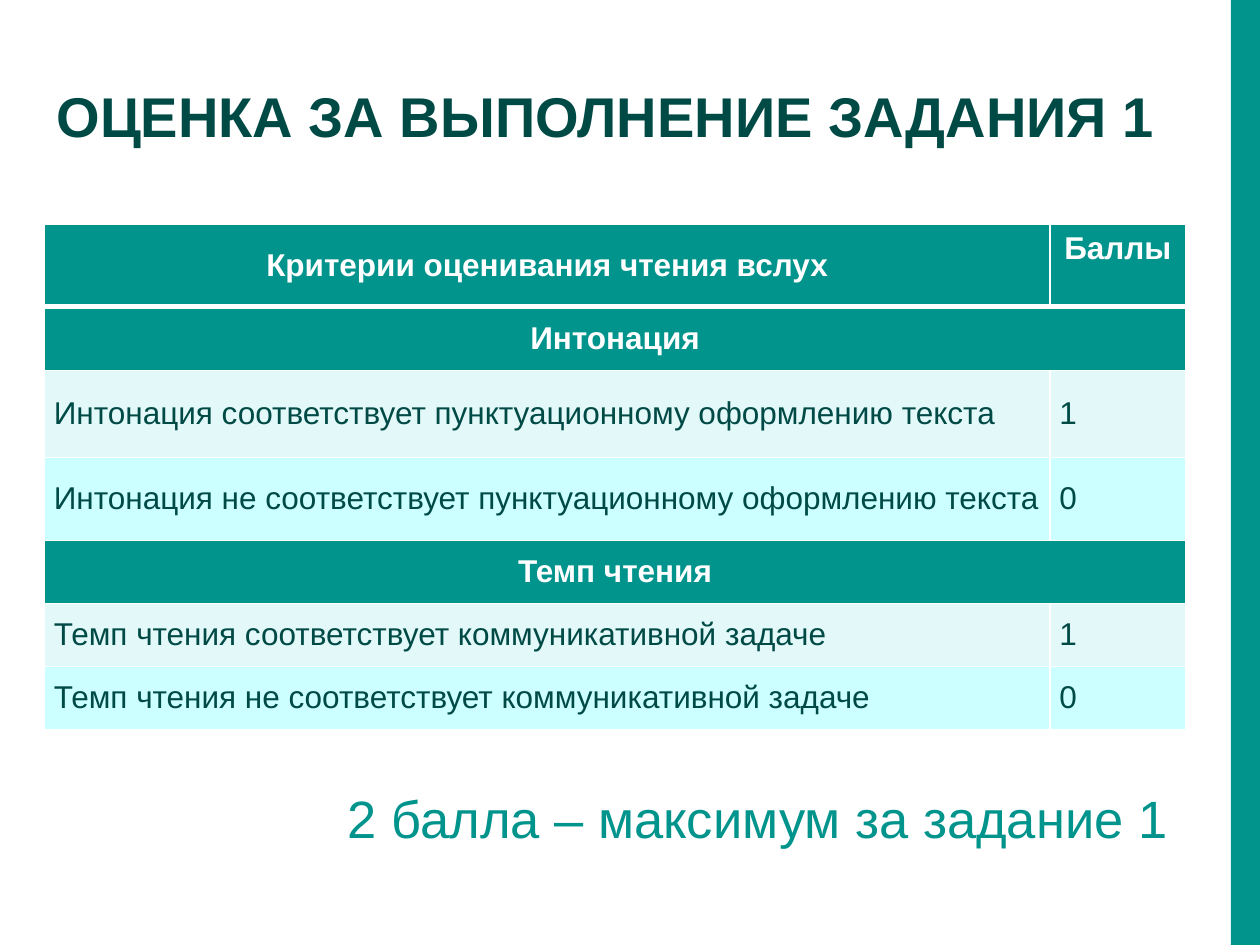
import dataclasses

import pptx
import pptx.dml.color
import pptx.enum.shapes
import pptx.enum.text
import pptx.oxml
import pptx.oxml.ns
import pptx.util

Pt = pptx.util.Pt
Align = pptx.enum.text.PP_ALIGN
Anchor = pptx.enum.text.MSO_ANCHOR


@dataclasses.dataclass(frozen=True)
class Theme:
    """Colours, typeface and type sizes."""
    face: str = "Arial"
    teal: str = "00948C"
    ink: str = "004A46"
    white: str = "FFFFFF"
    pale: str = "E3F8F9"
    aqua: str = "CCFFFF"
    title: int = 32
    total: int = 30
    body: int = 18


def paint(fill, tone):
    """Give a fill one solid colour."""
    fill.solid()
    fill.fore_color.rgb = pptx.dml.color.RGBColor.from_string(tone)


def write(frame, text, face, size, tone, bold=False, align=Align.LEFT):
    """Put one formatted paragraph into a text frame."""
    para = frame.paragraphs[0]
    para.alignment = align
    run = para.add_run()
    run.text = text
    run.font.name = face
    run.font.size = Pt(size)
    run.font.bold = bold
    paint(run.font.fill, tone)


def edge(cell, tone, top=1, base=1):
    """Draw the four borders of a table cell."""
    props = cell._tc.get_or_add_tcPr()
    sides = {"lnL": 1, "lnR": 1, "lnT": top, "lnB": base}
    for spot, (side, width) in enumerate(sides.items()):
        line = pptx.oxml.parse_xml(
            f'<a:{side} {pptx.oxml.ns.nsdecls("a")} w="{Pt(width)}">'
            f'<a:solidFill><a:srgbClr val="{tone}"/></a:solidFill></a:{side}>')
        props.insert(spot, line)


class Maker:
    """Adds styled elements to the current slide."""

    def __init__(self, slide, theme):
        """Keep the slide and its style."""
        self.slide = slide
        self.theme = theme

    def bar(self, left, top, width, height):
        """Add a plain teal rectangle."""
        shape = self.slide.shapes.add_shape(
            pptx.enum.shapes.MSO_SHAPE.RECTANGLE,
            Pt(left), Pt(top), Pt(width), Pt(height))
        shape.shadow.inherit = False
        paint(shape.fill, self.theme.teal)
        shape.line.fill.background()

    def label(self, text, left, top, width, height, wrap=True, **form):
        """Add a text box with one line of text."""
        box = self.slide.shapes.add_textbox(
            Pt(left), Pt(top), Pt(width), Pt(height))
        box.text_frame.word_wrap = wrap
        box.text_frame.auto_size = pptx.enum.text.MSO_AUTO_SIZE.SHAPE_TO_FIT_TEXT
        write(box.text_frame, text, self.theme.face, **form)

    def cell(self, cell, text, fill, head=False):
        """Fill and style one table cell."""
        theme = self.theme
        paint(cell.fill, fill)
        cell.vertical_anchor = Anchor.MIDDLE
        cell.margin_left = cell.margin_right = Pt(5.4)
        cell.margin_top = cell.margin_bottom = 0
        write(cell.text_frame, text, theme.face, theme.body,
              theme.white if head else theme.ink, bold=head,
              align=Align.CENTER if head else Align.LEFT)

    def grid(self, left, top, cols, rows):
        """Add the score table; a row is its height and its texts."""
        theme = self.theme
        table = self.slide.shapes.add_table(
            len(rows), len(cols), Pt(left), Pt(top), Pt(sum(cols)),
            Pt(sum(height for height, *_ in rows))).table
        for col, width in zip(table.columns, cols):
            col.width = Pt(width)
        for at, (height, *texts) in enumerate(rows):
            table.rows[at].height = Pt(height)
            band = len(texts) == 1
            head = band or at == 0
            fill = theme.pale if texts[-1] == "1" else theme.aqua
            for spot, text in enumerate(texts):
                self.cell(table.cell(at, spot), text,
                          theme.teal if head else fill, head)
            if band:
                table.cell(at, 0).merge(table.cell(at, len(cols) - 1))
            for spot in range(len(cols)):
                edge(table.cell(at, spot), theme.white,
                     top=3 if at == 1 else 1, base=3 if at == 0 else 1)
        score = table.cell(0, 1)
        score.vertical_anchor = Anchor.TOP
        score.margin_top = Pt(3.6)


def main():
    """Build the slide and save it."""
    deck = pptx.Presentation()
    deck.slide_width, deck.slide_height = Pt(720), Pt(540)
    theme = Theme()
    make = Maker(deck.slides.add_slide(deck.slide_layouts[6]), theme)
    make.bar(703.4, 0, 16.6, 540)
    make.grid(25.4, 128.4, (574.6, 77.6), (
        (46.8, "Критерии оценивания чтения вслух", "Баллы"),
        (36.5, "Интонация"),
        (49.7, "Интонация соответствует пунктуационному оформлению текста", "1"),
        (47.4, "Интонация не соответствует пунктуационному оформлению текста", "0"),
        (36, "Темп чтения"),
        (36, "Темп чтения соответствует коммуникативной задаче", "1"),
        (36, "Темп чтения не соответствует коммуникативной задаче", "0"),
    ))
    make.label("2 балла – максимум за задание 1", 133.2, 445.7, 541.4, 43.9,
               size=theme.total, tone=theme.teal, align=Align.RIGHT)
    make.label("ОЦЕНКА ЗА ВЫПОЛНЕНИЕ ЗАДАНИЯ 1", 25.2, 43.2, 648, 46,
               wrap=False, size=theme.title, tone=theme.ink, bold=True)
    deck.save("out.pptx")


if __name__ == "__main__":
    main()
